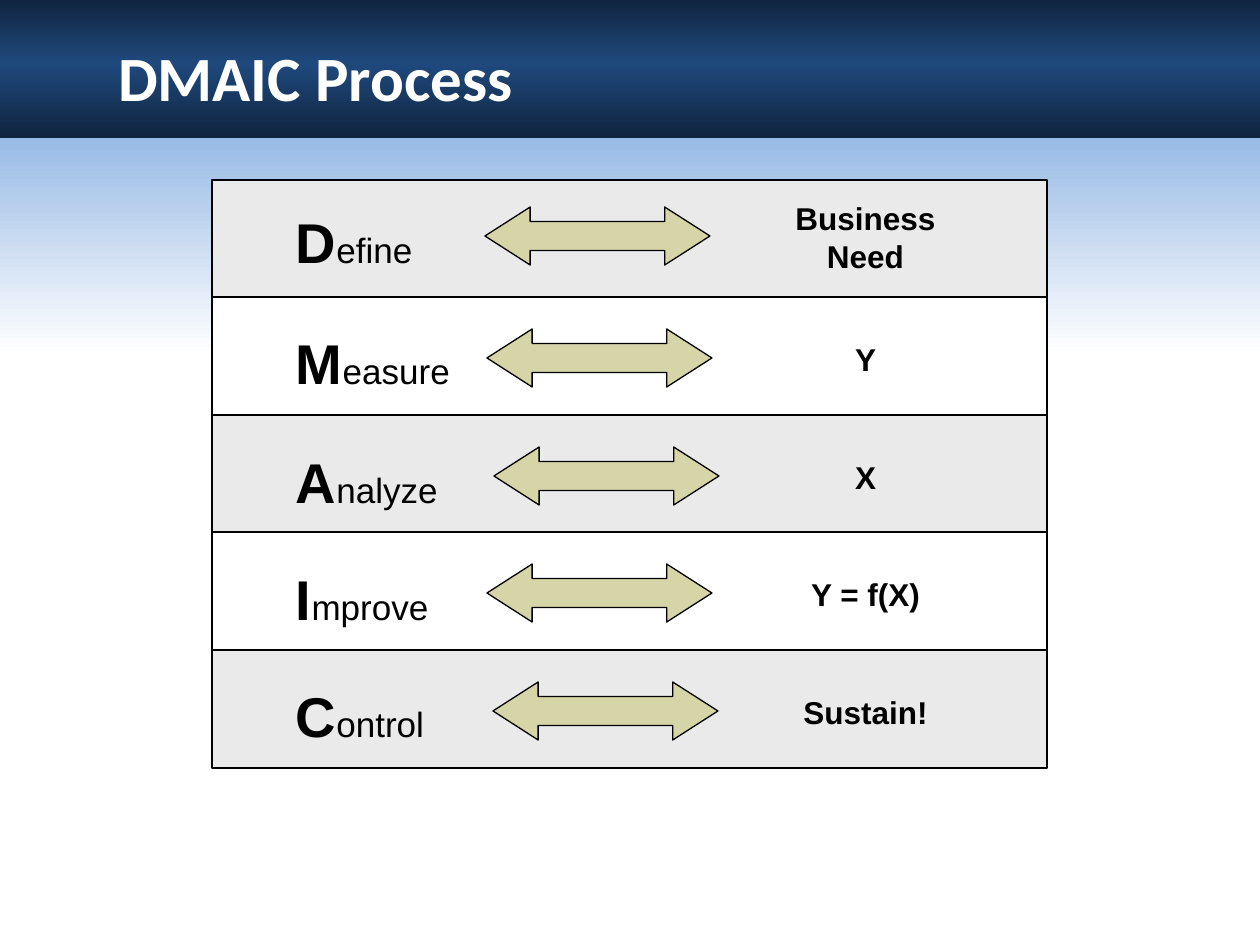
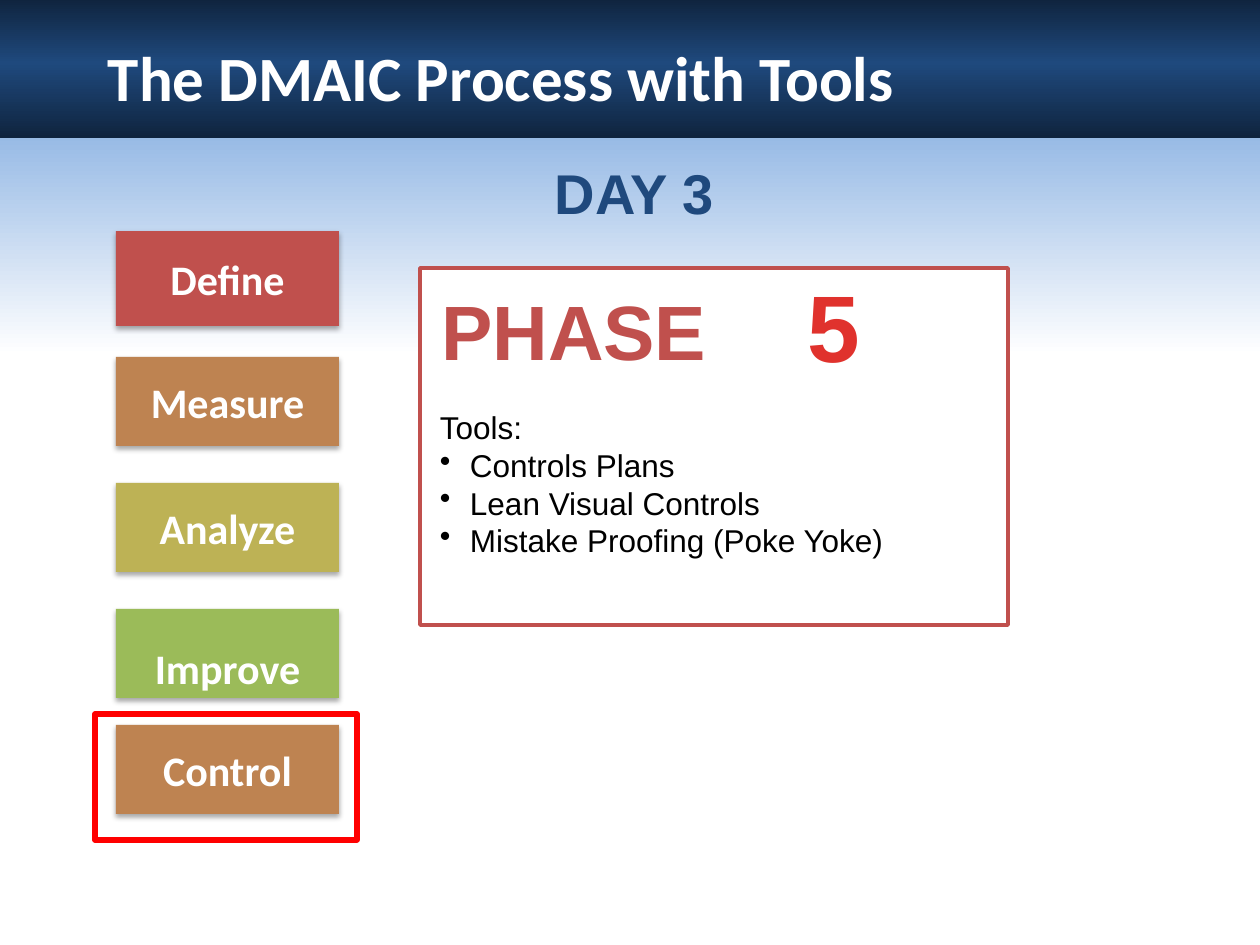
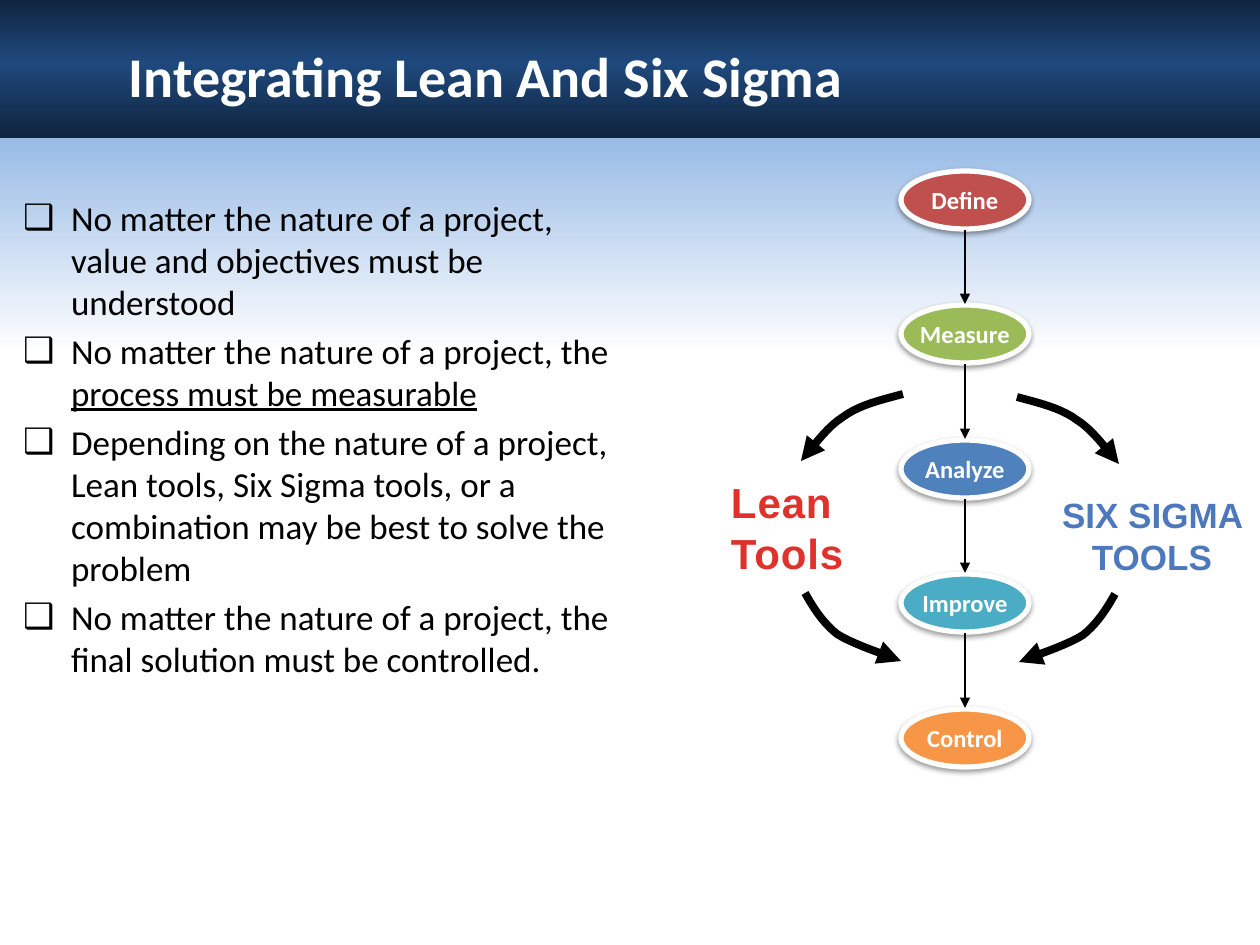
from dataclasses import dataclass

from lxml import etree
from pptx import Presentation
from pptx.dml.color import RGBColor
from pptx.enum.shapes import MSO_CONNECTOR, MSO_SHAPE
from pptx.enum.text import MSO_ANCHOR, MSO_AUTO_SIZE, PP_ALIGN
from pptx.oxml.ns import qn
from pptx.util import Emu, Pt

EMU_PER_PX = 914400 / 126
RECTANGLE = MSO_SHAPE.RECTANGLE
ELLIPSE = MSO_SHAPE.OVAL
DOUBLE_ARROW = MSO_SHAPE.LEFT_RIGHT_ARROW
STRAIGHT = MSO_CONNECTOR.STRAIGHT
LEFT, CENTER = PP_ALIGN.LEFT, PP_ALIGN.CENTER
TOP, MIDDLE = MSO_ANCHOR.TOP, MSO_ANCHOR.MIDDLE
NO_AUTOFIT = MSO_AUTO_SIZE.NONE


@dataclass(frozen=True)
class TextStyle:
    size: int
    color: str
    font: str = "Arial"
    bold: bool = True
    spacing: float = 0


@dataclass(frozen=True)
class Theme:
    white: str = "FFFFFF"
    black: str = "000000"
    navy: str = "0F243E"
    blue: str = "1F497D"
    sky: str = "8EB4E3"
    gray: str = "EAEAEA"
    khaki: str = "D6D5A7"
    brick: str = "C0504D"
    brown: str = "BE8351"
    olive: str = "BDB255"
    green: str = "9BBB59"
    azure: str = "4F81BD"
    teal: str = "4BACC6"
    orange: str = "F79646"
    red: str = "FF0000"
    title: TextStyle = TextStyle(36, white, "Calibri")
    long_title: TextStyle = TextStyle(32, white, "Calibri")
    body: TextStyle = TextStyle(20, black, "Calibri", False)
    initial: TextStyle = TextStyle(32, black)
    outcome: TextStyle = TextStyle(18, black)
    tools: TextStyle = TextStyle(18, black, bold=False)
    box: TextStyle = TextStyle(24, white, "Calibri")
    node: TextStyle = TextStyle(14, white, "Calibri")
    day: TextStyle = TextStyle(32, blue)
    phase: TextStyle = TextStyle(44, brick)
    number: TextStyle = TextStyle(54, "E0322D", spacing=0.5)
    lean: TextStyle = TextStyle(24, "E0322D", spacing=0.5)
    sigma: TextStyle = TextStyle(20, "4D79BC")
    rest_size: int = 20


THEME = Theme()


def px(length):
    return Emu(round(length * EMU_PER_PX))


def rgb(color):
    return RGBColor.from_string(color)


class Deck:
    def __init__(self, theme):
        self.theme = theme
        self.presentation = Presentation()
        self.presentation.slide_width = px(1260)
        self.presentation.slide_height = px(945)
        self.layout = self.presentation.slide_layouts[0]
        self.slide = None

    def start_slide(self, title, box, style, points=None, points_box=None):
        first = self.slide is None
        self.slide = self.presentation.slides.add_slide(self.layout)
        if first:
            self.add_bands()
        heading = self.slide.shapes.title
        self.place(heading, box)
        self.set_text(heading, [title], style, anchor=MIDDLE)
        body = self.slide.placeholders[1]
        if points is None:
            body.element.getparent().remove(body.element)
            return
        self.place(body, points_box)
        self.set_text(body, points, self.theme.body)
        for paragraph in body.text_frame.paragraphs:
            paragraph.space_before = Pt(4)
            self.bullet(paragraph, "❑", 48)

    def add_bands(self):
        theme = self.theme
        bands = (
            ((-4, 116, 1264, 825), ((0, theme.sky), (29, theme.white), (100, theme.white))),
            ((-4, -1, 1265, 139), ((0, theme.navy), (46, theme.blue), (100, theme.navy))),
        )
        for index, (box, stops) in enumerate(bands):
            band = self.shape(RECTANGLE, box)
            self.gradient(band, stops)
            band.element.nvSpPr.cNvPr.set("id", str(100 + index))
            self.layout.shapes.element.insert(2 + index, band.element)

    def gradient(self, shape, stops):
        shape.fill.gradient()
        shape.fill.gradient_angle = 270
        stop_list = next(shape.element.iter(qn("a:gsLst")))
        for stop in list(stop_list):
            stop_list.remove(stop)
        for position, color in stops:
            stop = etree.SubElement(stop_list, qn("a:gs"), pos=str(position * 1000))
            etree.SubElement(stop, qn("a:srgbClr"), val=color)

    def place(self, shape, box):
        shape.left, shape.top, shape.width, shape.height = map(px, box)

    def paint(self, shape, fill, line, weight):
        shape.shadow.inherit = False
        if fill:
            shape.fill.solid()
            shape.fill.fore_color.rgb = rgb(fill)
        else:
            shape.fill.background()
        if line:
            self.stroke(shape, line, weight)
        else:
            shape.line.fill.background()

    def stroke(self, shape, color, weight):
        shape.line.color.rgb = rgb(color)
        shape.line.width = Pt(weight)

    def shape(self, kind, box, fill=None, line=None, weight=1.0):
        shape = self.slide.shapes.add_shape(kind, *map(px, box))
        self.paint(shape, fill, line, weight)
        return shape

    def shadow(self, shape, opacity):
        effects = shape.element.spPr.find(qn("a:effectLst"))
        outer = etree.SubElement(
            effects, qn("a:outerShdw"), blurRad=str(Pt(3.1)), dist=str(Pt(1.7)),
            dir="5400000", rotWithShape="0")
        color = etree.SubElement(outer, qn("a:srgbClr"), val=self.theme.black)
        etree.SubElement(color, qn("a:alpha"), val=str(opacity * 1000))

    def set_text(self, shape, paragraphs, style, align=LEFT, anchor=TOP,
                 insets=(13, 6, 13, 6), wrap=True):
        frame = shape.text_frame
        frame.word_wrap = wrap
        frame.auto_size = NO_AUTOFIT
        frame.vertical_anchor = anchor
        (frame.margin_left, frame.margin_top,
         frame.margin_right, frame.margin_bottom) = map(px, insets)
        for index, runs in enumerate(paragraphs):
            paragraph = frame.add_paragraph() if index else frame.paragraphs[0]
            paragraph.alignment = align
            font = paragraph.font
            font.name, font.size, font.bold = style.font, Pt(style.size), style.bold
            font.color.rgb = rgb(style.color)
            if style.spacing:
                properties = next(paragraph._p.iter(qn("a:defRPr")))
                properties.set("spc", str(round(style.spacing * 100)))
            for part in [runs] if isinstance(runs, str) else runs:
                text, changes = (part, {}) if isinstance(part, str) else part
                run = paragraph.add_run()
                run.text = text
                run.font.size = changes.get("size")
                run.font.bold = changes.get("bold")
                run.font.underline = changes.get("underline")

    def bullet(self, paragraph, symbol, indent):
        properties = paragraph._p.get_or_add_pPr()
        properties.set("marL", str(px(indent)))
        properties.set("indent", str(-px(indent)))
        mark = etree.Element(qn("a:buChar"), char=symbol)
        properties.find(qn("a:defRPr")).addprevious(mark)

    def text(self, box, paragraphs, style, **options):
        text_box = self.slide.shapes.add_textbox(*map(px, box))
        self.set_text(text_box, paragraphs, style, **options)
        return text_box

    def arrowhead(self, shape):
        line = shape.element.spPr.find(qn("a:ln"))
        etree.SubElement(line, qn("a:tailEnd"), type="triangle")

    def arrow(self, start, end):
        connector = self.slide.shapes.add_connector(STRAIGHT, *map(px, start + end))
        self.stroke(connector, self.theme.black, 1.5)
        etree.SubElement(connector.element.spPr, qn("a:effectLst"))
        self.arrowhead(connector)

    def curved_arrow(self, points, steps=10):
        trace = [points[0]]
        for first in range(0, len(points) - 1, 3):
            corners = points[first:first + 4]
            for step in range(1, steps + 1):
                t = step / steps
                weights = ((1 - t) ** 3, 3 * t * (1 - t) ** 2, 3 * t ** 2 * (1 - t), t ** 3)
                trace.append(tuple(
                    sum(weight * corner[axis] for weight, corner in zip(weights, corners))
                    for axis in (0, 1)))
        trace = [(px(x), px(y)) for x, y in trace]
        builder = self.slide.shapes.build_freeform(*trace[0], scale=1.0)
        builder.add_line_segments(trace[1:], close=False)
        curve = builder.convert_to_shape()
        self.paint(curve, None, self.theme.black, 4.5)
        self.arrowhead(curve)


def build_process(deck):
    theme = deck.theme
    deck.start_slide("DMAIC Process", (105, 32, 656, 89), theme.title)
    stages = (
        ("D", "efine", "Business Need", 485),
        ("M", "easure", "Y", 487),
        ("A", "nalyze", "X", 494),
        ("I", "mprove", "Y = f(X)", 487),
        ("C", "ontrol", "Sustain!", 493),
    )
    row_tops = [180 + index * 235 // 2 for index in range(len(stages))]
    for index, row_top in enumerate(row_tops):
        fill = theme.white if index % 2 else theme.gray
        deck.shape(RECTANGLE, (212, row_top, 835, 118), fill, theme.black)
    insets = (6, 6, 6, 6)
    rest_format = {"size": Pt(theme.rest_size), "bold": False}
    for index, (initial, rest, outcome, arrow_left) in enumerate(stages):
        content_top = row_tops[index] + (20 if index else 15)
        deck.text((290, content_top + 6, 190, 79), [[initial, (rest, rest_format)]],
                  theme.initial, insets=insets)
        deck.text((761, content_top - 2, 209, 88), [outcome], theme.outcome,
                  align=CENTER, anchor=MIDDLE, insets=insets)
        arrow = deck.shape(DOUBLE_ARROW, (arrow_left, content_top + 12, 225, 58),
                           theme.khaki, theme.black, 0.75)
        arrow.adjustments[0], arrow.adjustments[1] = 0.5, 0.78


def build_tools(deck):
    theme = deck.theme
    deck.start_slide("The DMAIC Process with Tools", (95, 32, 1155, 89), theme.title)
    phases = (
        ("Define", 231, 95, theme.brick, 0),
        ("Measure", 357, 89, theme.brown, 0),
        ("Analyze", 483, 89, theme.olive, 0),
        ("Improve", 609, 89, theme.green, 28),
        ("Control", 725, 89, theme.brown, 0),
    )
    for name, top, height, fill, top_inset in phases:
        box = deck.shape(RECTANGLE, (116, top, 223, height), fill)
        deck.shadow(box, 35)
        deck.set_text(box, [name], theme.box, align=CENTER, anchor=MIDDLE,
                      insets=(13, top_inset, 13, 0))
    deck.shape(RECTANGLE, (420, 268, 588, 357), theme.white, theme.brick, 2)
    deck.text((794, 262, 79, 127), ["5"], theme.number, align=CENTER, wrap=False)
    deck.text((427, 278, 294, 106), ["PHASE"], theme.phase, align=CENTER, wrap=False)
    tools = deck.text(
        (427, 402, 570, 200),
        ["Tools:", "Controls Plans", "Lean Visual Controls", "Mistake Proofing (Poke Yoke)"],
        theme.tools)
    for paragraph in tools.text_frame.paragraphs[1:]:
        deck.bullet(paragraph, "•", 30)
    deck.text((542, 152, 185, 81), ["DAY 3"], theme.day, wrap=False)
    deck.shape(RECTANGLE, (95, 714, 262, 126), line=theme.red, weight=3)


def build_integration(deck):
    theme = deck.theme
    points = [
        "No matter the nature of a project, value and objectives must be understood",
        ["No matter the nature of a project, the ",
         ("process must be measurable", {"underline": True})],
        "Depending on the nature of a project, Lean tools, Six Sigma tools, or a "
        "combination may be best to solve the problem",
        "No matter the nature of a project, the final solution must be controlled.",
    ]
    deck.start_slide("Integrating Lean And Six Sigma", (116, 35, 1071, 81),
                     theme.long_title, points, (10, 190, 625, 586))
    nodes = (("Define", theme.brick), ("Measure", theme.green), ("Analyze", theme.azure),
             ("Improve", theme.teal), ("Control", theme.orange))
    node_tops = [171 + index * 269 // 2 for index in range(len(nodes))]
    for (name, fill), top in zip(nodes, node_tops):
        node = deck.shape(ELLIPSE, (901, top, 128, 58), fill, theme.white, 3)
        deck.shadow(node, 38)
        deck.set_text(node, [name], theme.node, align=CENTER, anchor=MIDDLE, wrap=False)
    for top, next_top in zip(node_tops, node_tops[1:]):
        deck.arrow((965, top + 59), (965, next_top - 1))
    deck.text((725, 477, 170, 102), ["Lean Tools"], theme.lean, insets=(6, 0, 6, 0))
    deck.text((1050, 493, 204, 84), ["SIX SIGMA TOOLS"], theme.sigma,
              align=CENTER, insets=(6, 0, 6, 0))
    left_curves = (
        (((903, 394), (881, 400), (859, 405), (843, 417),
          (825, 428), (808, 454), (801, 461)), 3),
        (((805, 593), (813, 607), (822, 622), (837, 634),
          (854, 645), (890, 656), (901, 661)), 1),
    )
    for curve, drop in left_curves:
        deck.curved_arrow(curve)
        deck.curved_arrow([(1920 - x, y + drop) for x, y in curve])


def main():
    deck = Deck(THEME)
    build_process(deck)
    build_tools(deck)
    build_integration(deck)
    deck.presentation.save("out.pptx")


if __name__ == "__main__":
    main()
